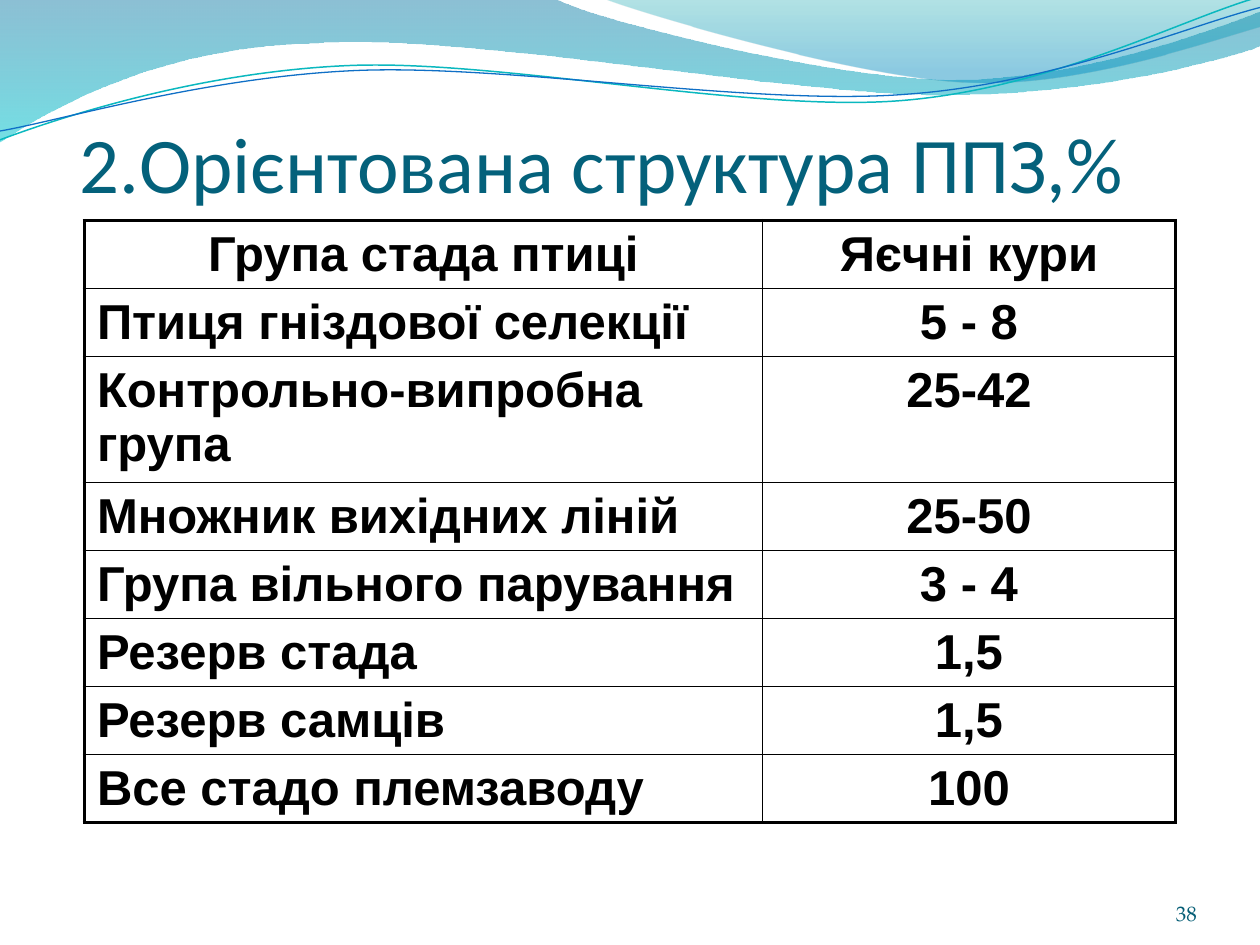
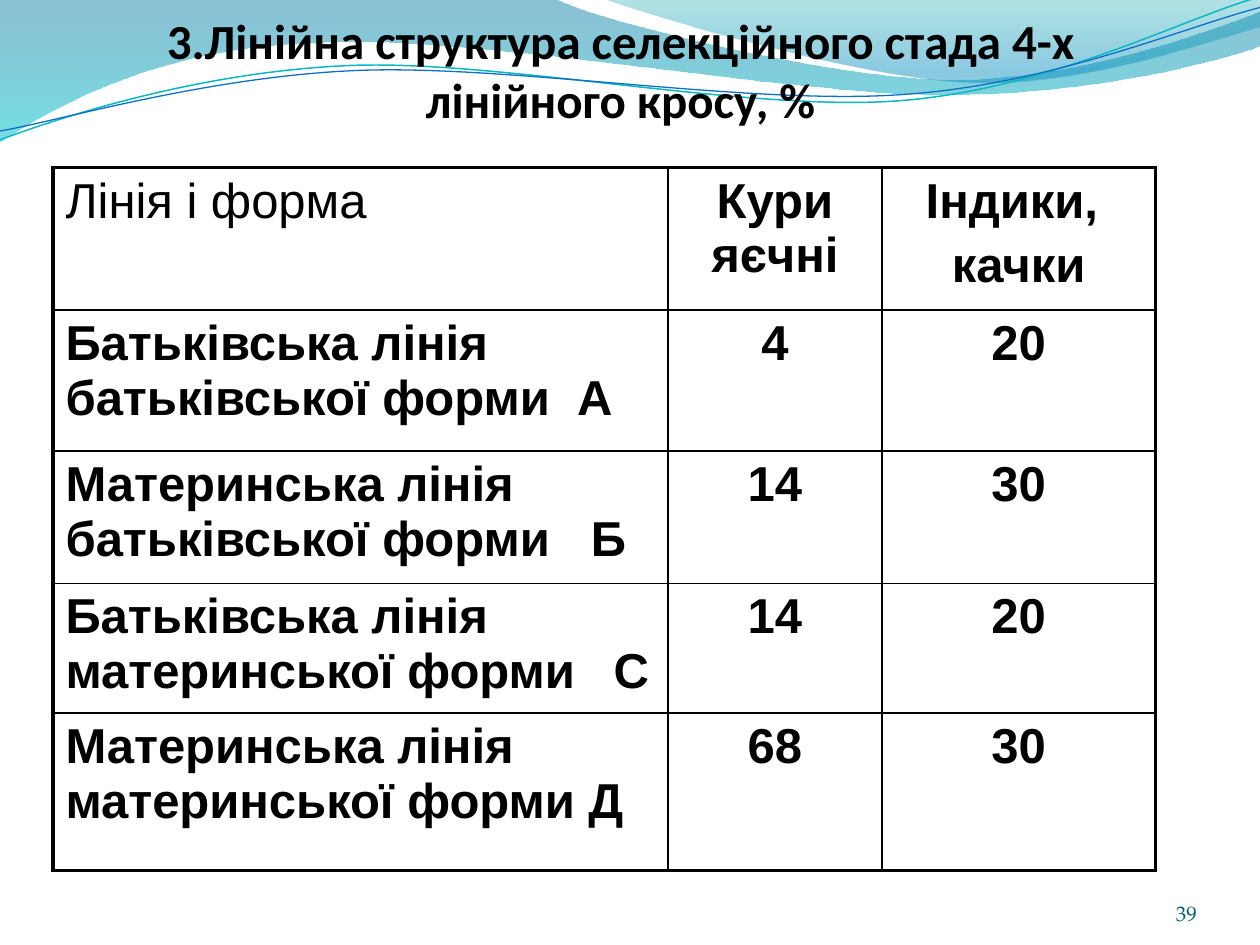
"""Build two slides with tables on flock structure under a wave header."""
from math import cos, radians, sin
from lxml.etree import SubElement
from pptx import Presentation
from pptx.dml.color import RGBColor
from pptx.enum.text import MSO_ANCHOR, MSO_AUTO_SIZE, PP_ALIGN
from pptx.oxml.ns import qn
from pptx.util import Inches, Pt

COLORS = {
    "black": "000000", "title": "04617B", "number": "045D75",
    "deep": "0074A1", "aqua": "00C6CF", "teal": "00A1A9", "sky": "008BBF",
    "cyan": "0AB8BF", "blue": "0F6FC6",
}
THICK, THIN = 2.25, 1
TILT = 2.7
FRAME = {
    "word_wrap": True, "auto_size": MSO_AUTO_SIZE.NONE,
    "vertical_anchor": MSO_ANCHOR.BOTTOM,
    "margin_left": 0, "margin_right": 0, "margin_top": 0, "margin_bottom": 0,
}
BODY = {"name": "Arial", "size": Pt(28), "bold": True}
PLAIN = {**BODY, "bold": False}
HEAD = {"name": "Calibri", "size": Pt(45), "bold": False}
STRONG = {**HEAD, "size": Pt(28), "bold": True}
SMALL = {"name": "TeX Gyre Pagella", "size": Pt(12)}

BANDS = [
    ([(0, 0), (4.4, -0.01),
      (4.76, 0.17, 6.64, 0.63, 7.58, 0.63), (8.53, 0.63, 9.58, 0.26, 10, 0.09),
      (10.01, 0.36),
      (9.83, 0.44, 8.7, 0.76, 7.46, 0.75), (6.22, 0.75, 3.82, 0.28, 2.57, 0.34),
      (1.29, 0.36, 0.46, 0.83, -0.01, 1.13), (0, 0)],
     [(0, "deep", 45), (1, "aqua", 55)]),
    ([(4.79, -0.01),
      (5.09, 0.11, 6.82, 0.62, 7.69, 0.65), (8.56, 0.69, 9.61, 0.32, 10, 0.21),
      (10, 0), (4.79, -0.01)],
     [(0, "teal", 30), (0.8, "sky", 45)]),
]
CURVES = [
    ([(0, 1.11), (0.48, 0.93, 1.58, 0.57, 2.77, 0.52),
      (3.95, 0.47, 5.93, 0.89, 7.13, 0.8), (8.33, 0.71, 9.38, 0.15, 9.98, -0.02)],
     (4.99, 0.58), "cyan", 0.85),
    ([(0, 1.04), (0.47, 0.96, 1.64, 0.61, 2.83, 0.56),
      (4.03, 0.51, 5.97, 0.84, 7.17, 0.75), (8.36, 0.67, 9.41, 0.21, 10, 0.06)],
     (5, 0.59), "blue", 0.75),
]

FLOCK = [
    ("Група стада птиці", "Яєчні кури"),
    ("Птиця гніздової селекції", "5 - 8"),
    ("Контрольно-випробна група", "25-42"),
    ("Множник вихідних ліній", "25-50"),
    ("Група вільного парування", "3 - 4"),
    ("Резерв стада", "1,5"),
    ("Резерв самців", "1,5"),
    ("Все стадо племзаводу", "100"),
]
CROSS = [
    ("Лінія і форма", "Кури яєчні", "Індики, \nкачки"),
    ("Батьківська лінія батьківської форми\tА", "4", "20"),
    ("Материнська лінія батьківської форми\tБ", "14", "30"),
    ("Батьківська лінія материнської форми\tС", "14", "20"),
    ("Материнська лінія материнської форми Д", "68", "30"),
]
TABS = {1: 4.06, 2: 4.17, 3: 4.35}


def color(name):
    return RGBColor.from_string(COLORS[name])


def apply(item, values):
    for key, value in values.items():
        setattr(item, key, value)


def write(frame, text, font, tint="black", align=PP_ALIGN.LEFT):
    frame.text = text
    for part in frame.paragraphs:
        part.alignment = align
        apply(part.font, font)
        part.font.color.rgb = color(tint)


def turn(node, center):
    angle, (mid_x, mid_y) = radians(TILT), center
    points = []
    for x, y in zip(node[::2], node[1::2]):
        x, y = x - mid_x, y - mid_y
        points += [mid_x + x * cos(angle) - y * sin(angle),
                   mid_y + x * sin(angle) + y * cos(angle)]
    return points


def bend(shape, nodes):
    steps = list(shape.element.iter(qn("a:lnTo")))
    for node in nodes[1:]:
        group, steps = steps[:len(node) // 2], steps[len(node) // 2:]
        if len(group) == 3:
            curve = SubElement(group[0].getparent(), qn("a:cubicBezTo"))
            group[0].addprevious(curve)
            for step in group:
                curve.append(step[0])
                step.getparent().remove(step)


def draw(slide, nodes, close):
    points = [(Inches(x), Inches(y)) for node in nodes
              for x, y in zip(node[::2], node[1::2])]
    pen = slide.shapes.build_freeform(*points[0])
    pen.add_line_segments(points[1:], close=close)
    shape = pen.convert_to_shape()
    shape.shadow.inherit = False
    bend(shape, nodes)
    return shape


def add_band(slide, nodes, stops):
    shape = draw(slide, nodes, True)
    shape.line.fill.background()
    shape.fill.gradient()
    shape.fill.gradient_angle = 270
    for stop, (place, tint, _) in zip(shape.fill.gradient_stops, stops):
        stop.position = place
        stop.color.rgb = color(tint)
    for node, (_, _, alpha) in zip(shape.element.iter(qn("a:srgbClr")), stops):
        SubElement(node, qn("a:alpha"), val=str(alpha * 1000))
    return shape


def add_curve(slide, nodes, center, tint, width):
    shape = draw(slide, [turn(node, center) for node in nodes], False)
    shape.rotation = 360 - TILT
    shape.fill.background()
    shape.line.color.rgb = color(tint)
    shape.line.width = Pt(width)
    return shape


def add_waves(slide):
    shapes = [add_band(slide, *band) for band in BANDS]
    shapes += [add_curve(slide, *curve) for curve in CURVES]
    for shape in shapes:
        slide.slide_layout.slide_master.shapes.element.append(shape.element)


def add_title(slide, text, left, top, font, tint, align):
    title = slide.shapes.title
    apply(title, {"left": Inches(left), "top": Inches(top),
                  "width": Inches(8.75), "height": Inches(1.33)})
    apply(title.text_frame, {**FRAME, "margin_top": Inches(0.05)})
    write(title.text_frame, text, font, tint, align)


def add_number(slide, number):
    box = slide.shapes.add_textbox(Inches(8.67), Inches(6.95), Inches(0.83), Inches(0.4))
    apply(box.text_frame, FRAME)
    write(box.text_frame, str(number), SMALL, "number", PP_ALIGN.RIGHT)


def add_edges(cell, edges):
    props = cell._tc.get_or_add_tcPr()
    for side, outer in edges.items():
        width = THICK if outer else THIN
        line = SubElement(props, qn(f"a:ln{side}"), w=str(Pt(width)))
        fill = SubElement(line, qn("a:solidFill"))
        SubElement(fill, qn("a:srgbClr"), val=COLORS["black"])


def add_tab(cell, place):
    props = cell.text_frame.paragraphs[0]._p.get_or_add_pPr()
    stops = SubElement(props, qn("a:tabLst"))
    SubElement(stops, qn("a:tab"), pos=str(Inches(place)), algn="l")


def add_grid(slide, data, left, top, widths, heights):
    frame = slide.shapes.add_table(
        len(data), len(widths), Inches(left), Inches(top),
        Inches(sum(widths)), Inches(sum(heights)))
    table = frame.table
    apply(table, {"first_row": False, "horz_banding": False})
    for column, width in zip(table.columns, widths):
        column.width = Inches(width)
    for row, height in zip(table.rows, heights):
        row.height = Inches(height)
    for r, texts in enumerate(data):
        for c, text in enumerate(texts):
            cell = table.cell(r, c)
            align = PP_ALIGN.CENTER if c else PP_ALIGN.LEFT
            write(cell.text_frame, text, BODY, align=align)
            for part in cell.text_frame.paragraphs[1:]:
                part.space_before = Pt(5.6)
            add_edges(cell, {"L": c == 0, "R": c == len(widths) - 1,
                             "T": r == 0, "B": r == len(data) - 1})
            cell.fill.background()
    return table


def main():
    deck = Presentation()
    deck.slide_width, deck.slide_height = Inches(10), Inches(7.5)
    layout = deck.slide_layouts[5]

    flock = deck.slides.add_slide(layout)
    add_waves(flock)
    add_title(flock, "2.Орієнтована структура ППЗ,%", 0.63, 0.33,
              HEAD, "title", PP_ALIGN.LEFT)
    table = add_grid(flock, FLOCK, 0.67, 1.75, [5.38, 3.28],
                     [0.54] * 2 + [1] + [0.54] * 5)
    table.cell(0, 0).text_frame.paragraphs[0].alignment = PP_ALIGN.CENTER
    add_number(flock, 38)

    cross = deck.slides.add_slide(layout)
    add_title(cross, "3.Лінійна структура селекційного стада 4-х лінійного кросу, %",
              0.55, -0.31, STRONG, "black", PP_ALIGN.CENTER)
    table = add_grid(cross, CROSS, 0.42, 1.33, [4.88, 1.7, 2.17],
                     [1.13, 1.12, 1.05, 1.03, 1.25])
    apply(table.cell(0, 0).text_frame.paragraphs[0].font, PLAIN)
    for row, place in TABS.items():
        add_tab(table.cell(row, 0), place)
    add_number(cross, 39)

    deck.save("out.pptx")


if __name__ == "__main__":
    main()
